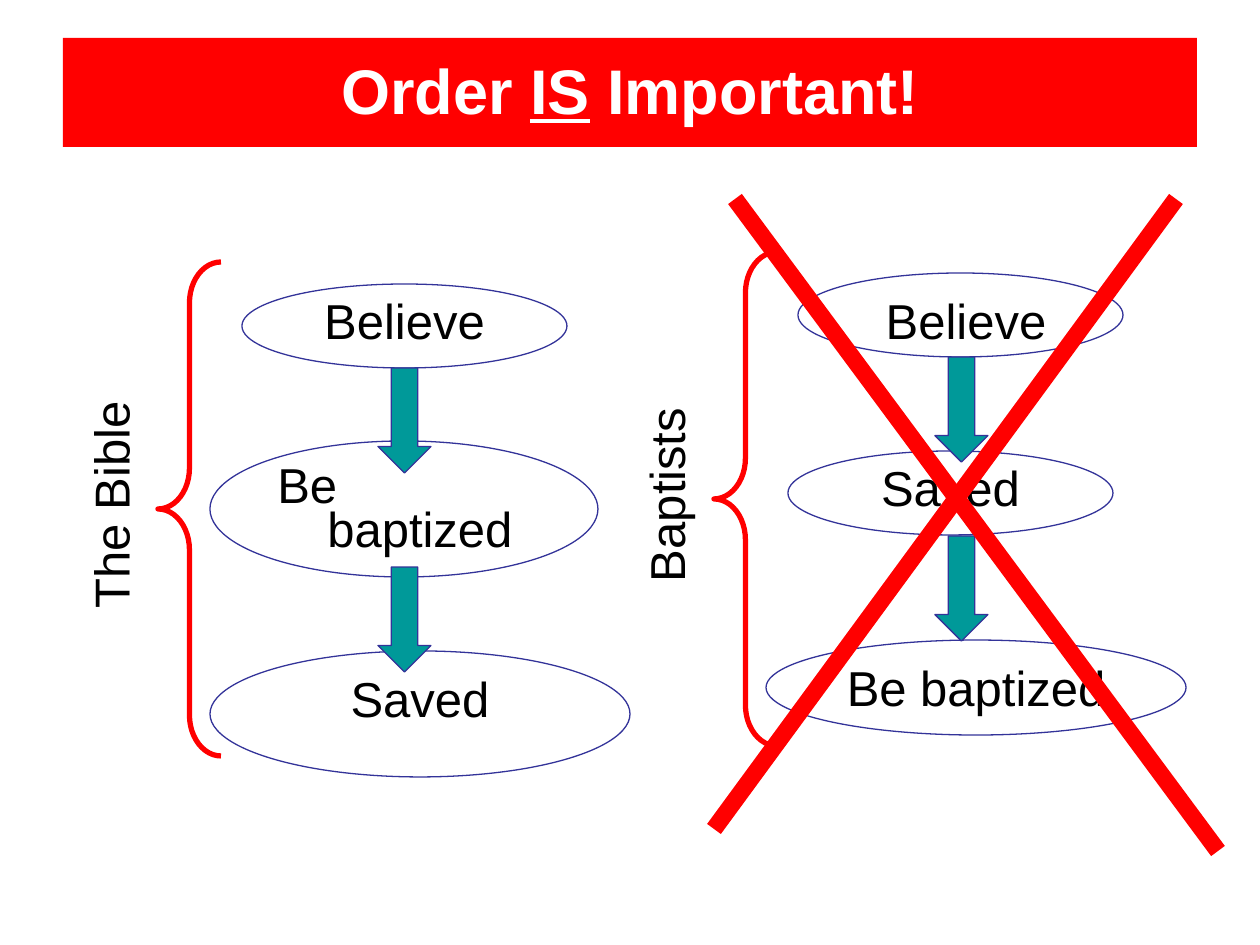
from dataclasses import dataclass

from lxml.etree import SubElement
from pptx import Presentation
from pptx.dml.color import RGBColor
from pptx.enum.shapes import MSO_CONNECTOR, MSO_SHAPE
from pptx.enum.text import MSO_ANCHOR, PP_ALIGN
from pptx.oxml.ns import qn
from pptx.util import Pt

EMU_PER_PX = 914400 / 126


@dataclass(frozen=True)
class Theme:
    font: str = "Arial"
    title_size: float = 36
    label_size: float = 28
    text: str = "000000"
    title_text: str = "FFFFFF"
    red: str = "FF0000"
    outline: str = "333399"
    arrow: str = "009999"
    thin: float = 0.75
    brace: float = 3
    cross: float = 9.75


@dataclass(frozen=True)
class Area:
    left: int
    top: int
    width: int
    height: int


@dataclass(frozen=True)
class Step:
    text: str
    label: Area
    oval: Area
    before: float = 3
    spacing: float = 1
    align: PP_ALIGN = PP_ALIGN.CENTER
    margin: int = 0
    indent: int = 0


@dataclass(frozen=True)
class Sequence:
    name: str
    name_area: Area
    brace: Area
    steps: tuple[Step, ...]
    arrow_left: int
    arrow_tops: tuple[int, ...]


THEME = Theme()
ARROW_WIDTH, ARROW_HEIGHT = 53, 105

BIBLE = Sequence(
    "The Bible", Area(-6, 469, 233, 72), Area(158, 262, 63, 494),
    (
        Step("Believe", Area(126, 284, 557, 73), Area(242, 284, 325, 84)),
        Step("Be\nbaptized", Area(210, 462, 378, 101), Area(210, 441, 388, 136),
             spacing=0.75, align=PP_ALIGN.LEFT, margin=105, indent=-50),
        Step("Saved", Area(210, 662, 420, 88), Area(210, 651, 420, 126), before=13),
    ),
    378, (368, 567),
)
BAPTISTS = Sequence(
    "Baptists", Area(566, 459, 200, 72), Area(714, 252, 63, 494),
    (
        Step("Believe", Area(777, 284, 378, 72), Area(798, 273, 325, 84)),
        Step("Saved", Area(672, 451, 557, 73), Area(788, 451, 325, 84)),
        Step("Be baptized", Area(766, 651, 420, 72), Area(766, 640, 420, 95)),
    ),
    935, (357, 536),
)
CROSS = ((714, 829, 1176, 199), (735, 199, 1218, 851))


def px(length: int) -> int:
    return round(length * EMU_PER_PX)


def place(area: Area) -> tuple[int, ...]:
    return tuple(map(px, (area.left, area.top, area.width, area.height)))


def write_text(box, text: str, *, size: float = THEME.label_size, color: str = THEME.text,
               bold: bool = False, underlined: str = "", align: PP_ALIGN = PP_ALIGN.CENTER,
               before: float = 3, spacing: float = 1, margin: int = 0, indent: int = 0,
               wrap: bool = True, anchor: MSO_ANCHOR = MSO_ANCHOR.TOP) -> None:
    frame = box.text_frame
    frame.word_wrap = wrap
    frame.vertical_anchor = anchor
    para = frame.paragraphs[0]
    para.alignment = align
    para.space_before = Pt(before)
    para.line_spacing = spacing
    if margin:
        properties = para._p.get_or_add_pPr()
        properties.set("marL", str(px(margin)))
        properties.set("indent", str(px(indent)))
    for number, line in enumerate(text.split("\n")):
        if number:
            para.add_line_break()
        parts = line.partition(underlined) if underlined else (line,)
        for part in filter(None, parts):
            span = para.add_run()
            span.text = part
            span.font.name = THEME.font
            span.font.size = Pt(size)
            span.font.bold = bold
            span.font.underline = bool(underlined) and part == underlined
            span.font.color.rgb = RGBColor.from_string(color)


def draw_shape(shapes, kind: MSO_SHAPE, area: Area, *, fill: str = "",
               line: str = "", weight: float = THEME.thin):
    shape = shapes.add_shape(kind, *place(area))
    shape.shadow.inherit = False
    if fill:
        shape.fill.solid()
        shape.fill.fore_color.rgb = RGBColor.from_string(fill)
    else:
        shape.fill.background()
    if line:
        shape.line.color.rgb = RGBColor.from_string(line)
        shape.line.width = Pt(weight)
    else:
        shape.line.fill.background()
    return shape


def draw_title(page) -> None:
    banner = draw_shape(page.shapes, MSO_SHAPE.RECTANGLE, Area(63, 38, 1134, 109), fill=THEME.red)
    write_text(banner, "Order IS Important!", size=THEME.title_size, color=THEME.title_text,
               bold=True, underlined="IS", before=0, spacing=0.95, anchor=MSO_ANCHOR.MIDDLE)


def draw_steps(page, sequence: Sequence) -> None:
    shapes = page.shapes.add_group_shape().shapes
    for step in sequence.steps:
        box = shapes.add_textbox(*place(step.label))
        write_text(box, step.text, before=step.before, spacing=step.spacing,
                   align=step.align, margin=step.margin, indent=step.indent)
    for step in sequence.steps:
        draw_shape(shapes, MSO_SHAPE.OVAL, step.oval, line=THEME.outline)
    for top in sequence.arrow_tops:
        area = Area(sequence.arrow_left, top, ARROW_WIDTH, ARROW_HEIGHT)
        draw_shape(shapes, MSO_SHAPE.DOWN_ARROW, area, fill=THEME.arrow, line=THEME.outline)


def draw_brace(page, sequence: Sequence) -> None:
    brace = draw_shape(page.shapes, MSO_SHAPE.LEFT_BRACE, sequence.brace,
                       line=THEME.red, weight=THEME.brace)
    brace.adjustments[0] = 0.65


def draw_name(page, sequence: Sequence) -> None:
    box = page.shapes.add_textbox(*place(sequence.name_area))
    box.rotation = 270
    write_text(box, sequence.name, wrap=False)


def draw_cross(page) -> None:
    for ends in CROSS:
        stroke = page.shapes.add_connector(MSO_CONNECTOR.STRAIGHT, *map(px, ends))
        stroke.line.color.rgb = RGBColor.from_string(THEME.red)
        stroke.line.width = Pt(THEME.cross)
        SubElement(stroke._element.spPr, qn("a:effectLst"))


def main() -> None:
    deck = Presentation()
    deck.slide_width, deck.slide_height = px(1260), px(945)
    page = deck.slides.add_slide(deck.slide_layouts[6])
    draw_title(page)
    draw_steps(page, BAPTISTS)
    draw_cross(page)
    draw_brace(page, BAPTISTS)
    draw_steps(page, BIBLE)
    draw_brace(page, BIBLE)
    for sequence in (BIBLE, BAPTISTS):
        draw_name(page, sequence)
    deck.save("out.pptx")


if __name__ == "__main__":
    main()
